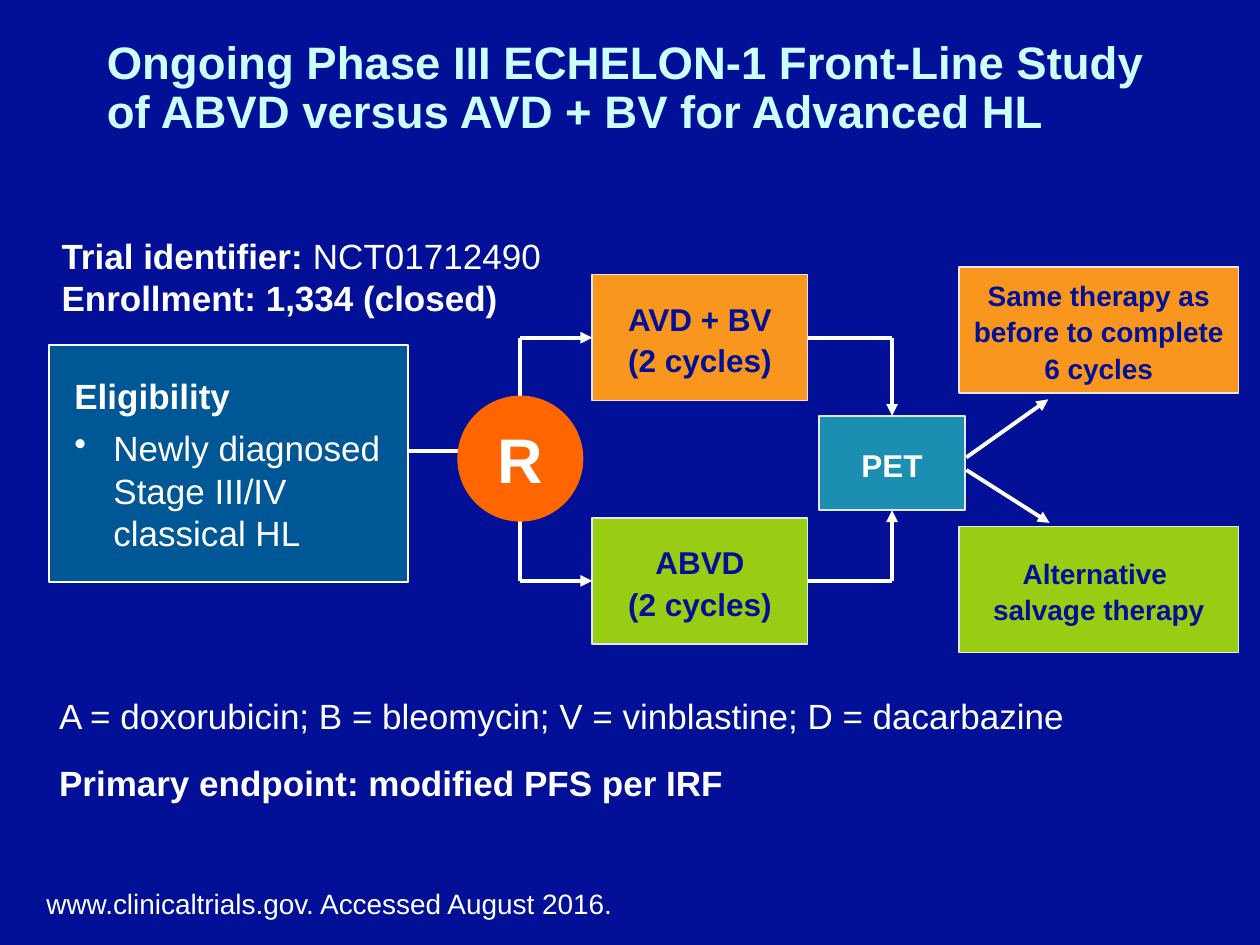
from lxml.etree import SubElement
from pptx import Presentation
from pptx.dml.color import RGBColor
from pptx.enum.shapes import MSO_CONNECTOR as Connector, MSO_SHAPE as Shape
from pptx.enum.text import MSO_ANCHOR as Anchor, PP_ALIGN as Align
from pptx.oxml.ns import qn
from pptx.util import Inches, Pt

NAVY = RGBColor(0x01, 0x10, 0x97)
WHITE = RGBColor(0xFF, 0xFF, 0xFF)
PALE_CYAN = RGBColor(0xCC, 0xFF, 0xFF)
PALE_GREY = RGBColor(0xE6, 0xE6, 0xE6)
ORANGE = RGBColor(0xF9, 0x96, 0x1E)
DEEP_ORANGE = RGBColor(0xFF, 0x66, 0x00)
GREEN = RGBColor(0x99, 0xCD, 0x13)
BLUE = RGBColor(0x00, 0x57, 0x96)
TEAL = RGBColor(0x1B, 0x8E, 0xB1)

COLUMNS, ROWS = 100, 75
TOP, LEFT, BOTTOM, RIGHT = range(4)


class TrialSlide:
    """Style and current page; lengths are columns and rows of a 100 x 75 grid."""

    font = "Arial"
    line_width = Pt(2.25)

    def __init__(self, deck):
        self.page = deck.slides.add_slide(deck.slide_layouts[6])
        self.page.background.fill.solid()
        self.page.background.fill.fore_color.rgb = NAVY
        self.column = deck.slide_width / COLUMNS
        self.row = deck.slide_height / ROWS

    def place(self, *lengths):
        units = (self.column, self.row) * 2
        return [round(length * unit) for length, unit in zip(lengths, units)]

    def set_text(self, shape, paragraphs, size, color=WHITE, bold=True, align=Align.LEFT,
                 spacing=None, before=None, anchor=Anchor.TOP, wrap=True):
        """Each paragraph is a string, or a list of (words, bold) spans."""
        frame = shape.text_frame
        frame.word_wrap, frame.vertical_anchor = wrap, anchor
        for index, content in enumerate(paragraphs):
            para = frame.paragraphs[0] if index == 0 else frame.add_paragraph()
            para.alignment = align
            para.line_spacing = spacing
            para.space_before = before
            para.font.name, para.font.size = self.font, Pt(size)
            para.font.color.rgb = color
            if isinstance(content, str):
                para.text = content
                para.font.bold = bold
                continue
            for words, is_bold in content:
                span = para.add_run()
                span.text, span.font.bold = words, is_bold
        return frame

    def text(self, place, paragraphs, size, **style):
        box = self.page.shapes.add_textbox(*self.place(*place))
        return self.set_text(box, paragraphs, size, **style)

    def box(self, place, paragraphs, size, fill, outline=PALE_GREY, kind=Shape.RECTANGLE,
            align=Align.CENTER, spacing=1.1, **style):
        shape = self.page.shapes.add_shape(kind, *self.place(*place))
        shape.shadow.inherit = False
        shape.fill.solid()
        shape.fill.fore_color.rgb = fill
        if outline is None:
            shape.line.fill.background()
        else:
            shape.line.color.rgb = outline
            shape.line.width = Pt(1)
        self.set_text(shape, paragraphs, size, align=align, spacing=spacing,
                      anchor=Anchor.MIDDLE, **style)
        return shape

    def line(self, start, end, arrow=False):
        """Each end is a grid point, or a (box, side) pair to join."""
        def point(spot):
            return (0, 0) if hasattr(spot[0], "text_frame") else self.place(*spot)

        line = self.page.shapes.add_connector(Connector.STRAIGHT, *point(start), *point(end))
        for spot, join in ((start, line.begin_connect), (end, line.end_connect)):
            if hasattr(spot[0], "text_frame"):
                join(*spot)
        line.line.color.rgb = WHITE
        line.line.width = self.line_width
        properties = line._element.spPr
        if arrow:
            SubElement(properties.find(qn("a:ln")), qn("a:tailEnd"), type="triangle")
        SubElement(properties, qn("a:effectLst"))

    def indent(self, para, inches, bullet=None):
        properties = para._p.get_or_add_pPr()
        properties.set("marL", str(Inches(inches)))
        properties.set("indent", str(-Inches(inches)))
        if bullet:
            mark = properties.makeelement(qn("a:buChar"), {"char": bullet})
            properties.find(qn("a:defRPr")).addprevious(mark)


def main():
    deck = Presentation()
    deck.slide_width, deck.slide_height = Inches(10), Inches(7.5)
    slide = TrialSlide(deck)

    # Title and trial facts
    slide.text((7.5, 0, 85, 14.1),
               ["Ongoing Phase III ECHELON-1 Front-Line Study "
                "of ABVD versus AVD + BV for Advanced HL"],
               26, color=PALE_CYAN, spacing=0.9, anchor=Anchor.MIDDLE)
    slide.text((3.9, 18.1, 40.3, 7.7),
               [[("Trial identifier: ", True), ("NCT01712490", False)],
                "Enrollment: 1,334 (closed)"], 20, wrap=False)

    # Eligibility, with its link to randomisation
    slide.line((32.1, 35.8), (36.6, 35.8))
    eligibility = slide.box((3.9, 27.4, 28.5, 18.8),
                            ["Eligibility",
                             [("Newly diagnosed Stage III/IV classical HL", False)]],
                            20, BLUE, WHITE, align=Align.LEFT, spacing=None, before=Pt(6))
    frame = eligibility.text_frame
    frame.margin_left = frame.margin_top = frame.margin_bottom = Inches(0.2)
    slide.indent(frame.paragraphs[1], 0.31, "•")

    # Treatment arms, scan and follow-up
    pet = slide.box((65, 33, 11.6, 7.5), ["PET"], 18, TEAL)
    arms = [slide.box((47, top, 17.1, 10), [name, "(2 cycles)"], 18, fill, color=NAVY)
            for name, top, fill in (("AVD + BV", 21.8, ORANGE), ("ABVD", 41.1, GREEN))]
    for words, top, fill in (("Same therapy as before to complete 6 cycles", 21.2, ORANGE),
                             ("Alternative \vsalvage therapy", 41.8, GREEN)):
        slide.box((76.1, top, 22.2, 10), [words], 16, fill, color=NAVY)

    # Paths from randomisation through each arm to the scan
    center_x, center_y, pet_x = 41.3, 36.4, 70.8
    for arm, middle, side in zip(arms, (26.8, 46.1), (TOP, BOTTOM)):
        slide.line((center_x, center_y), (center_x, middle))
        slide.line((center_x, middle), (arm, LEFT), arrow=True)
        slide.line((arm, RIGHT), (pet_x, middle))
        slide.line((pet_x, middle), (pet, side), arrow=True)
    slide.line((76.7, 36.3), (83.2, 31.7), arrow=True)
    slide.line((76.7, 37.3), (83.3, 41.5), arrow=True)
    slide.box((center_x - 5, center_y - 5, 10, 10), ["R"], 36, DEEP_ORANGE, None,
              kind=Shape.OVAL, spacing=None, wrap=False)

    # Abbreviations, endpoint and source
    notes = slide.text((3.7, 54.3, 92.5, 10),
                       [[("A = doxorubicin; B = bleomycin; V = vinblastine; D = dacarbazine",
                          False)],
                        "Primary endpoint: modified PFS per IRF"],
                       20, spacing=1.1, before=Pt(12))
    for para in notes.paragraphs:
        slide.indent(para, 0.1)
    slide.text((2.7, 69.9, 96.2, 3.7), ["www.clinicaltrials.gov. Accessed August 2016."],
               16, bold=False)

    deck.save("out.pptx")


if __name__ == "__main__":
    main()
